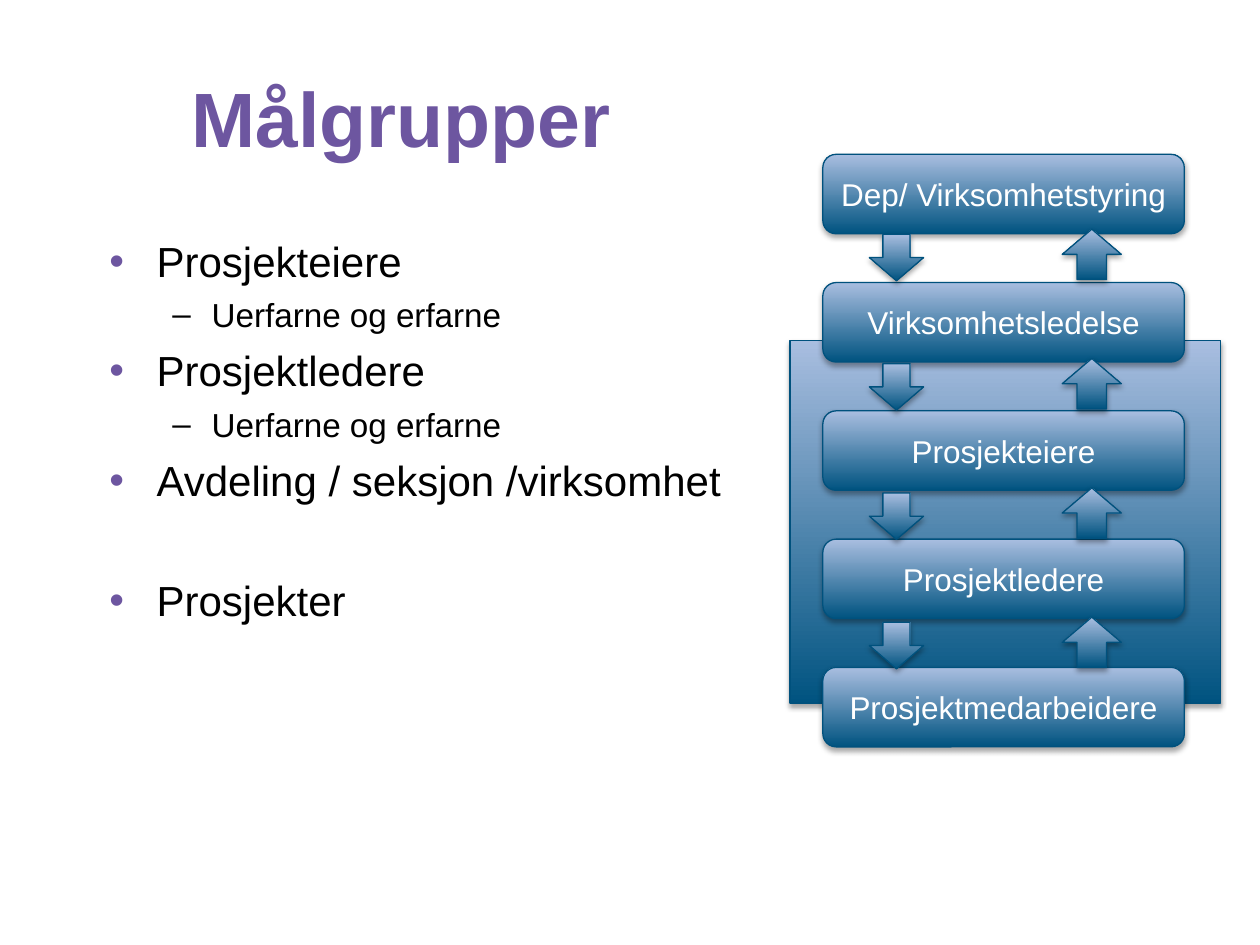
from lxml import etree
from pptx import Presentation
from pptx.dml.color import RGBColor
from pptx.enum.shapes import MSO_SHAPE as Shape
from pptx.enum.text import MSO_ANCHOR as Anchor, PP_ALIGN as Align
from pptx.oxml import parse_xml
from pptx.oxml.ns import nsdecls, qn
from pptx.util import Pt

PURPLE = RGBColor(0x6D, 0x56, 0xA0)
DARK_BLUE = RGBColor(0x00, 0x53, 0x80)
LIGHT_BLUE = RGBColor(0xA9, 0xBE, 0xE0)
OUTLINE = RGBColor(0x00, 0x51, 0x7D)
BLACK = RGBColor(0, 0, 0)
WHITE = RGBColor(0xFF, 0xFF, 0xFF)
FONT = "Arial"

TITLE = "Målgrupper"
# level, text, space before
AUDIENCES = [
    (0, "Prosjekteiere", 0),
    (1, "Uerfarne og erfarne", 5),
    (0, "Prosjektledere", 6),
    (1, "Uerfarne og erfarne", 5),
    (0, "Avdeling / seksjon /virksomhet", 6),
    (0, "Prosjekter", 39.8),
]
# bullet, bullet colour, left margin, hanging indent, size
LEVELS = [("•", PURPLE, 27, 27, 24), ("–", BLACK, 58.5, 22.5, 19)]

ROLES = ["Dep/ Virksomhetstyring", "Virksomhetsledelse", "Prosjekteiere",
         "Prosjektledere", "Prosjektmedarbeidere"]
PANEL = (451.4, 194.4, 246.2, 207.4)
ROLE_LEFT, ROLE_TOP, ROLE_WIDTH, ROLE_HEIGHT = 470.2, 88.2, 206.6, 45.4
ROLE_PITCH = 73.3
# shape, left, first top, width, height
ARROWS = [(Shape.DOWN_ARROW, 496.8, 133.9, 31, 26.6),
          (Shape.UP_ARROW, 607, 131, 33.8, 28.8)]
ARROW_PITCH = 73.9

SHADOW = (f'<a:outerShdw {nsdecls("a")} blurRad="{Pt(3.1)}" dist="{Pt(1.8)}" '
          'dir="5400000" rotWithShape="0"><a:srgbClr val="000000">'
          '<a:alpha val="35000"/></a:srgbClr></a:outerShdw>')


def style(font, size, color, bold=False):
    font.name, font.size, font.bold = FONT, Pt(size), bold
    font.color.rgb = color


def add_glossy(slide, kind, *box):
    """Add a shape with the blue gradient, thin outline and soft shadow."""
    shape = slide.shapes.add_shape(kind, *map(Pt, box))
    shape.fill.gradient()
    shape.fill.gradient_angle = 90
    for stop, color in zip(shape.fill.gradient_stops, (DARK_BLUE, LIGHT_BLUE)):
        stop.color.rgb = color
    shape.line.color.rgb = OUTLINE
    shape.line.width = Pt(0.75)
    shape.shadow.inherit = False
    effects = shape.element.spPr.find(qn("a:effectLst"))
    effects.append(parse_xml(SHADOW))
    return shape


def add_text_frame(slide, *box):
    frame = slide.shapes.add_textbox(*map(Pt, box)).text_frame
    frame.word_wrap = True
    return frame


def set_bullet(paragraph, char, color, margin, hanging):
    props = paragraph._p.get_or_add_pPr()
    props.set("marL", str(Pt(margin)))
    props.set("indent", str(-Pt(hanging)))
    bullet_color = etree.SubElement(props, qn("a:buClr"))
    etree.SubElement(bullet_color, qn("a:srgbClr"), val=str(color))
    etree.SubElement(props, qn("a:buFont"), typeface=FONT)
    etree.SubElement(props, qn("a:buChar"), char=char)


def add_audiences(slide):
    frame = add_text_frame(slide, 55.4, 131, 375.8, 314)
    for i, (level, text, space) in enumerate(AUDIENCES):
        paragraph = frame.paragraphs[0] if i == 0 else frame.add_paragraph()
        paragraph.text = text
        paragraph.level = level
        *bullet, size = LEVELS[level]
        set_bullet(paragraph, *bullet)
        paragraph.space_before = Pt(space)
        style(paragraph.runs[0].font, size, BLACK)


def add_role_chain(slide):
    add_glossy(slide, Shape.RECTANGLE, *PANEL)
    for i, role in enumerate(ROLES):
        box = add_glossy(slide, Shape.ROUNDED_RECTANGLE, ROLE_LEFT,
                         ROLE_TOP + i * ROLE_PITCH, ROLE_WIDTH, ROLE_HEIGHT)
        frame = box.text_frame
        frame.text = role
        frame.word_wrap = True
        frame.vertical_anchor = Anchor.MIDDLE
        frame.paragraphs[0].alignment = Align.CENTER
        style(frame.paragraphs[0].runs[0].font, 18, WHITE)
    for kind, left, top, width, height in ARROWS:
        for i in range(len(ROLES) - 1):
            add_glossy(slide, kind, left, top + i * ARROW_PITCH, width, height)


def main():
    deck = Presentation()
    deck.slide_width, deck.slide_height = Pt(720), Pt(540)
    slide = deck.slides.add_slide(deck.slide_layouts[6])

    heading = add_text_frame(slide, 102.2, 21.6, 515.5, 90)
    heading.text = TITLE
    heading.vertical_anchor = Anchor.MIDDLE
    style(heading.paragraphs[0].runs[0].font, 44, PURPLE, bold=True)

    add_audiences(slide)
    add_role_chain(slide)
    deck.save("out.pptx")


if __name__ == "__main__":
    main()
